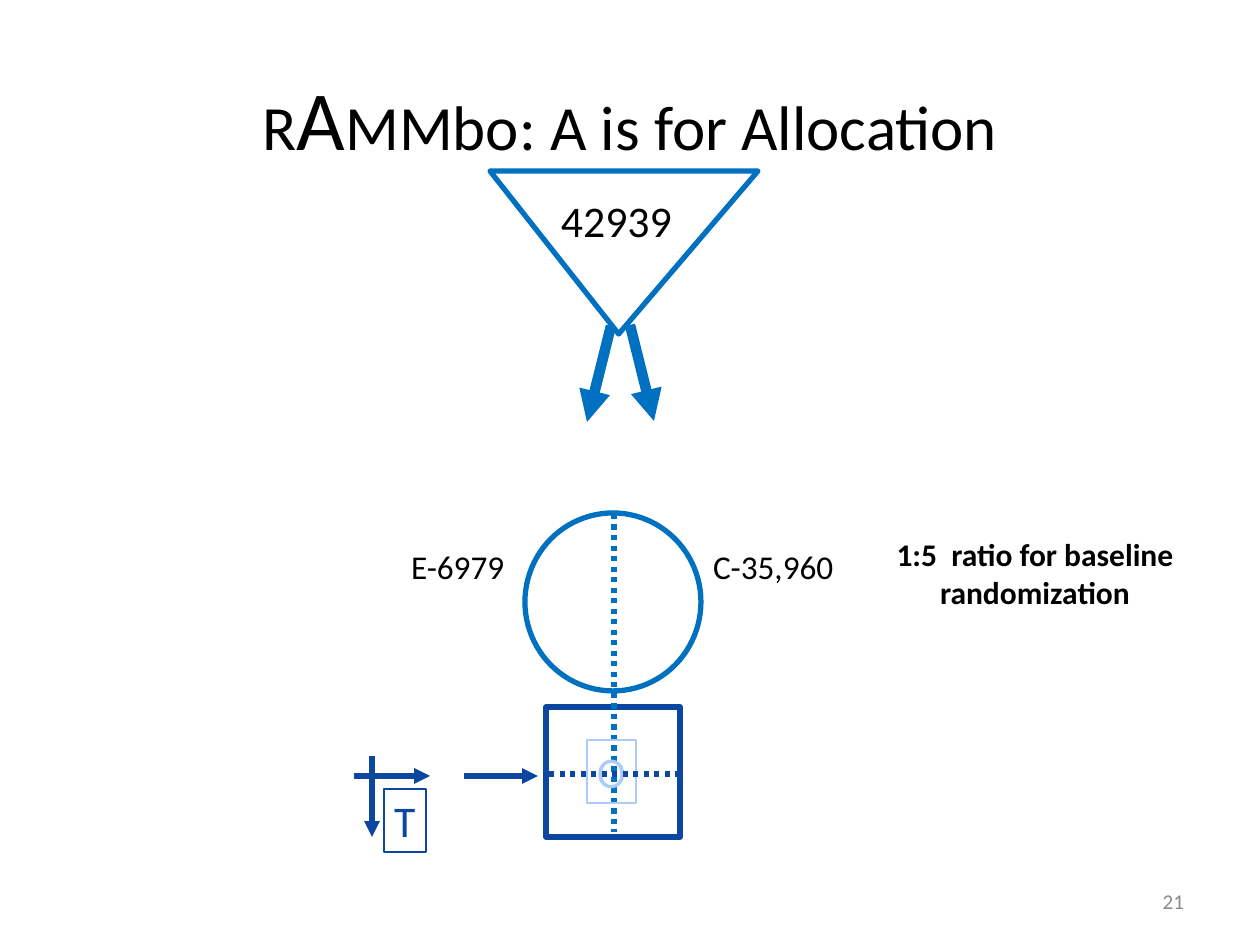
from dataclasses import dataclass

from lxml import etree
from pptx import Presentation
from pptx import util as u
from pptx.dml.color import RGBColor
from pptx.enum import dml, shapes, text
from pptx.oxml.ns import qn

SCALE = u.Inches(1) / 126


@dataclass(frozen=True)
class Theme:
    font: str = "Calibri"
    black: str = "000000"
    grey: str = "898989"
    blue: str = "0070C0"
    navy: str = "0B46A0"
    pale: str = "ACCBF9"
    title: int = 36
    emphasis: int = 48
    symbol: int = 25
    arm: int = 19
    note: int = 18
    number: int = 12
    thin: float = 0.75
    line: int = 3
    thick: int = 6


THEME = Theme()


def px(*values):
    return [u.Emu(round(v * SCALE)) for v in values]


def apply(target, values):
    for name, value in values.items():
        setattr(target, name, value)


def set_line(line, color, width):
    line.color.rgb = RGBColor.from_string(color)
    line.width = u.Pt(width)


def add_outline(s, kind, box, color, **values):
    sp = s.shapes.add_shape(kind, *px(*box))
    sp.shadow.inherit = False
    sp.fill.background()
    set_line(sp.line, color, THEME.line)
    apply(sp, values)
    return sp


def add_line(s, start, end, color, width=THEME.line, dotted=False):
    cn = s.shapes.add_connector(shapes.MSO_CONNECTOR.STRAIGHT, *px(*start, *end))
    set_line(cn.line, color, width)
    if dotted:
        cn.line.dash_style = dml.MSO_LINE.ROUND_DOT
    else:
        etree.SubElement(cn.line._get_or_add_ln(), qn("a:tailEnd"), type="triangle")
    etree.SubElement(cn._element.spPr, qn("a:effectLst"))


def add_text(s, box, runs, color=THEME.black, align=text.PP_ALIGN.LEFT,
             tab=None, bold=False, **frame):
    sp = s.shapes.add_textbox(*px(*box))
    tf = sp.text_frame
    side, edge = px(10, 5)
    apply(tf, {
        "word_wrap": True,
        "auto_size": text.MSO_AUTO_SIZE.SHAPE_TO_FIT_TEXT,
        "vertical_anchor": text.MSO_ANCHOR.TOP,
        "margin_left": side, "margin_right": side,
        "margin_top": edge, "margin_bottom": edge,
        **frame,
    })
    p = tf.paragraphs[0]
    p.alignment = align
    if tab:
        tabs = etree.SubElement(p._p.get_or_add_pPr(), qn("a:tabLst"))
        etree.SubElement(tabs, qn("a:tab"), pos=str(px(tab)[0]), algn="l")
    for words, size in runs:
        r = p.add_run()
        r.text = words
        apply(r.font, {"name": THEME.font, "size": u.Pt(size), "bold": bold})
        r.font.color.rgb = RGBColor.from_string(color)
    return sp


def add_symbol(s, box, letter, color):
    sp = add_text(s, box, [(letter, THEME.symbol)], color, word_wrap=False)
    set_line(sp.line, color, THEME.thin)


def add_heading(s):
    fixed = {"auto_size": text.MSO_AUTO_SIZE.NONE,
             "vertical_anchor": text.MSO_ANCHOR.MIDDLE}
    add_text(s, (63, 38, 1134, 158),
             [("R", THEME.title), ("A", THEME.emphasis),
              ("MMbo: A is for Allocation", THEME.title)],
             align=text.PP_ALIGN.CENTER, **fixed)
    add_text(s, (903, 876, 294, 50), [("21", THEME.number)], THEME.grey,
             align=text.PP_ALIGN.RIGHT, margin_right=px(13)[0], **fixed)


def add_allocation(s):
    kind = shapes.MSO_SHAPE
    add_outline(s, kind.OVAL, (525, 513, 176, 178), THEME.blue)
    add_outline(s, kind.RECTANGLE, (546, 707, 134, 130), THEME.navy)
    add_line(s, (614, 514), (614, 832), THEME.blue, dotted=True)
    add_line(s, (464, 776), (538, 776), THEME.navy)
    add_text(s, (401, 541, 447, 50), [("E-6979\tC-35,960", THEME.arm)], tab=302)
    add_symbol(s, (587, 740, 49, 63), "O", THEME.pale)

    population = add_outline(s, kind.ISOSCELES_TRIANGLE, (490, 171, 268, 163),
                             THEME.blue, rotation=180)
    population.adjustments[0] = 0.52
    add_text(s, (551, 189, 180, 63), [("42939", THEME.symbol)])
    for start, end in (((611, 326), (587, 422)), ((630, 325), (654, 421))):
        add_line(s, start, end, THEME.blue, THEME.thick)
    add_text(s, (882, 530, 306, 86),
             [("1:5  ratio for baseline randomization", THEME.note)],
             align=text.PP_ALIGN.CENTER, bold=True)


def add_time_axes(s):
    add_line(s, (549, 774), (680, 774), THEME.navy, dotted=True)
    add_line(s, (372, 756), (372, 837), THEME.navy)
    add_line(s, (354, 776), (430, 776), THEME.navy)
    add_symbol(s, (384, 789, 42, 63), "T", THEME.navy)


def main():
    prs = Presentation()
    prs.slide_width, prs.slide_height = px(1260, 945)
    s = prs.slides.add_slide(prs.slide_layouts[6])
    add_heading(s)
    add_allocation(s)
    add_time_axes(s)
    prs.save("out.pptx")


if __name__ == "__main__":
    main()
